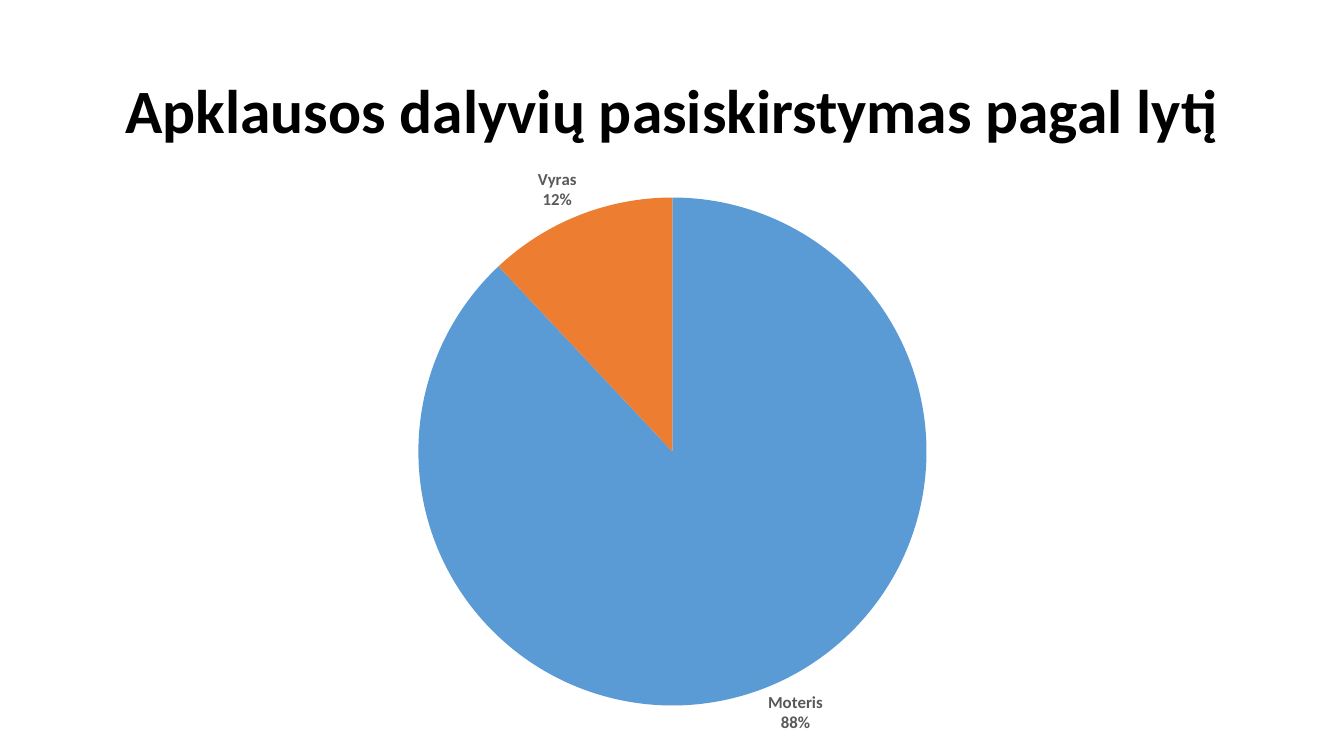
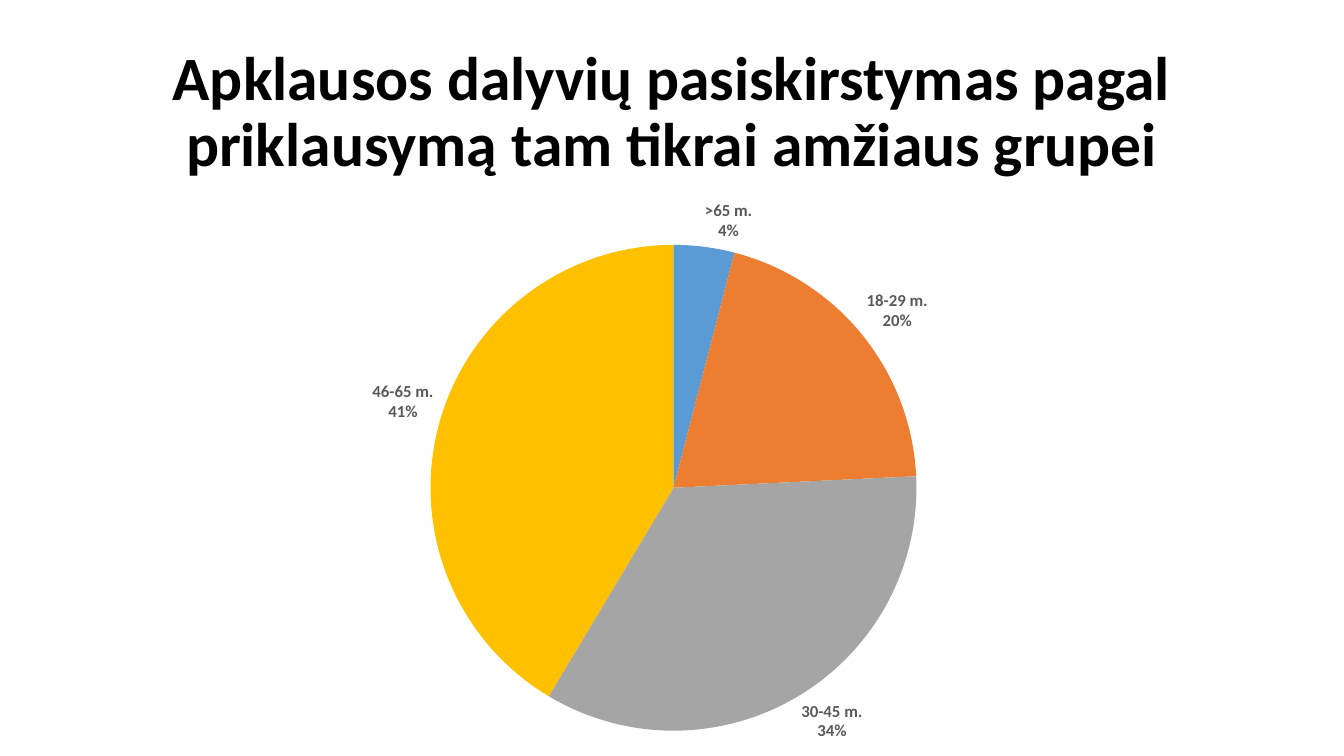
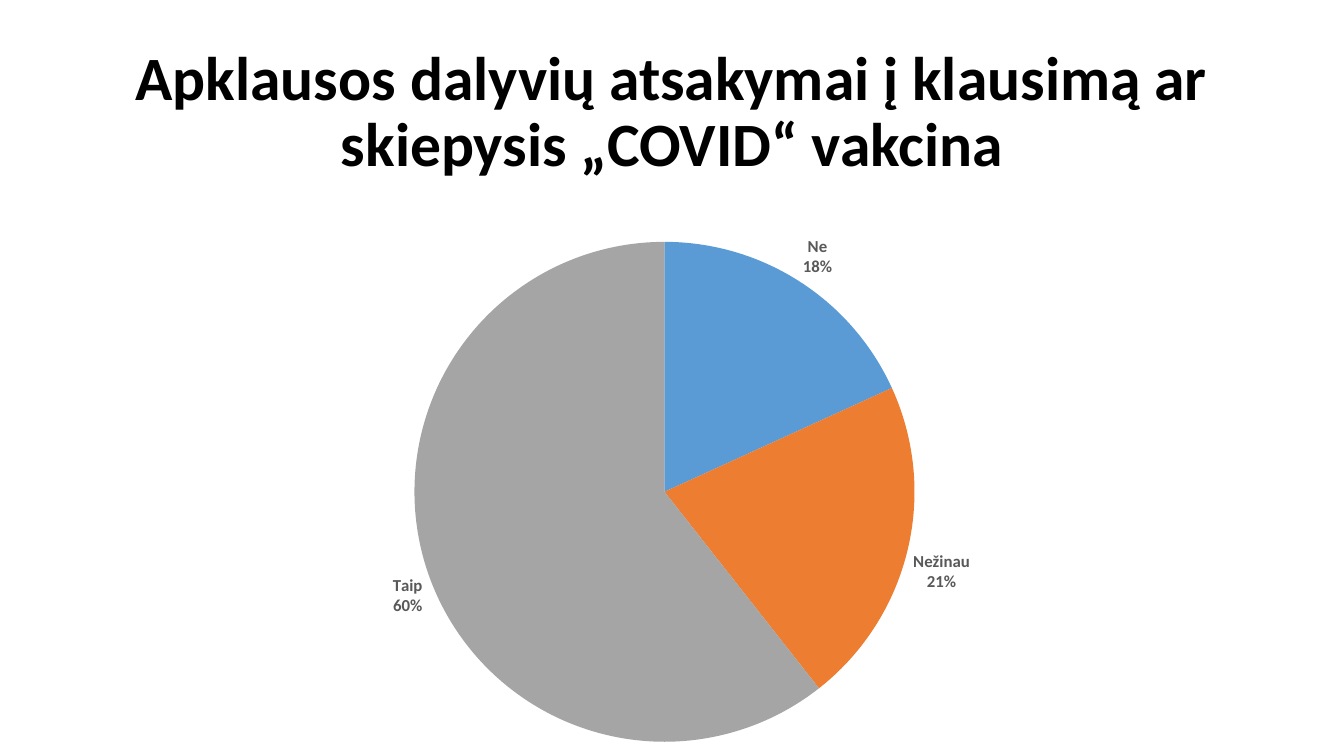
from pptx import Presentation
from pptx.chart.data import CategoryChartData
from pptx.dml.color import RGBColor
from pptx.enum.chart import XL_CHART_TYPE as ChartType, XL_LABEL_POSITION as LabelPosition
from pptx.enum.text import MSO_ANCHOR as Anchor, PP_ALIGN as Align
from pptx.oxml import parse_xml
from pptx.oxml.ns import nsdecls, qn
from pptx.util import Inches, Pt

COLORS = {"title": "000000", "label": "595959"}
SLICES = {"blue": "5B9BD5", "orange": "ED7D31", "gray": "A5A5A5", "yellow": "FFC000"}
FONT = "Calibri"

# frame: left, top, width, height; circle: centre x, centre y, diameter (inches on the slide)
SURVEY = [
    {
        "title": "Apklausos dalyvių pasiskirstymas pagal lytį",
        "shares": {"Moteris": 88, "Vyras": 12},
        "frame": (0, 1.46, 13.33, 6.04),
        "circle": (6.67, 4.48, 5.04),
    },
    {
        "title": "Apklausos dalyvių pasiskirstymas pagal priklausymą tam tikrai amžiaus grupei",
        "shares": {">65 m.": 4, "18-29 m.": 20, "30-45 m.": 34, "46-65 m.": 41},
        "frame": (-0.09, 1.85, 13.33, 5.84),
        "circle": (6.68, 4.84, 4.82),
    },
    {
        "title": "Apklausos dalyvių atsakymai į klausimą ar skiepysis „COVID“ vakcina",
        "shares": {"Ne": 18, "Nežinau": 21, "Taip": 60},
        "frame": (0.14, 2.01, 13.2, 5.49),
        "circle": (6.59, 4.88, 4.96),
    },
]


def style_font(font, size, color):
    font.name = FONT
    font.size = Pt(size)
    font.bold = True
    font.color.rgb = RGBColor.from_string(color)


def place_pie(chart, frame, circle):
    """Fix the plot area so that the pie fills the given circle."""
    left, top, width, height = frame
    center_x, center_y, diameter = circle
    fractions = {
        "x": (center_x - diameter / 2 - left) / width,
        "y": (center_y - diameter / 2 - top) / height,
        "w": diameter / width,
        "h": diameter / height,
    }
    modes = "".join(f'<c:{key}Mode val="edge"/>' for key in "xy")
    sizes = "".join(f'<c:{key} val="{value:.4f}"/>' for key, value in fractions.items())
    plot_area = chart.element.find(".//" + qn("c:plotArea"))
    for automatic in plot_area.findall(qn("c:layout")):
        plot_area.remove(automatic)
    plot_area.insert(0, parse_xml(
        f'<c:layout {nsdecls("c")}><c:manualLayout><c:layoutTarget val="inner"/>'
        f"{modes}{sizes}</c:manualLayout></c:layout>"))


prs = Presentation()
prs.slide_width, prs.slide_height = Inches(13.33), Inches(7.5)
blank = prs.slide_layouts[6]

for question in SURVEY:
    slide = prs.slides.add_slide(blank)

    heading = slide.shapes.add_textbox(
        Inches(0.92), Inches(0.4), Inches(11.5), Inches(1.45)).text_frame
    heading.word_wrap = True
    heading.vertical_anchor = Anchor.MIDDLE
    line = heading.paragraphs[0]
    line.text = question["title"]
    line.alignment = Align.CENTER
    line.line_spacing = 0.9
    style_font(line.font, 44, COLORS["title"])

    answers = CategoryChartData()
    answers.categories = question["shares"].keys()
    answers.add_series("Series 1", question["shares"].values())
    frame = question["frame"]
    chart = slide.shapes.add_chart(
        ChartType.PIE, *(Inches(length) for length in frame), answers).chart
    chart.has_title = False
    chart.has_legend = False
    chart.font.name = FONT
    chart.font.size = Pt(10)
    place_pie(chart, frame, question["circle"])

    pie = chart.plots[0]
    pie.vary_by_categories = True
    series = pie.series[0]
    for index, color in zip(range(len(question["shares"])), SLICES.values()):
        wedge = series.points[index].format
        wedge.fill.solid()
        wedge.fill.fore_color.rgb = RGBColor.from_string(color)
        wedge.line.fill.background()

    # The shares are rounded percentages that need not add up to 100
    labels = series.data_labels
    labels.show_category_name = True
    labels.show_value = True
    labels.number_format = '0"%"'
    labels.number_format_is_linked = False
    labels.position = LabelPosition.OUTSIDE_END
    style_font(labels.font, 12, COLORS["label"])
    separator = parse_xml(f'<c:separator {nsdecls("c")}/>')
    separator.text = "\n"
    chart.element.find(".//" + qn("c:showBubbleSize")).addnext(separator)

prs.save("out.pptx")
